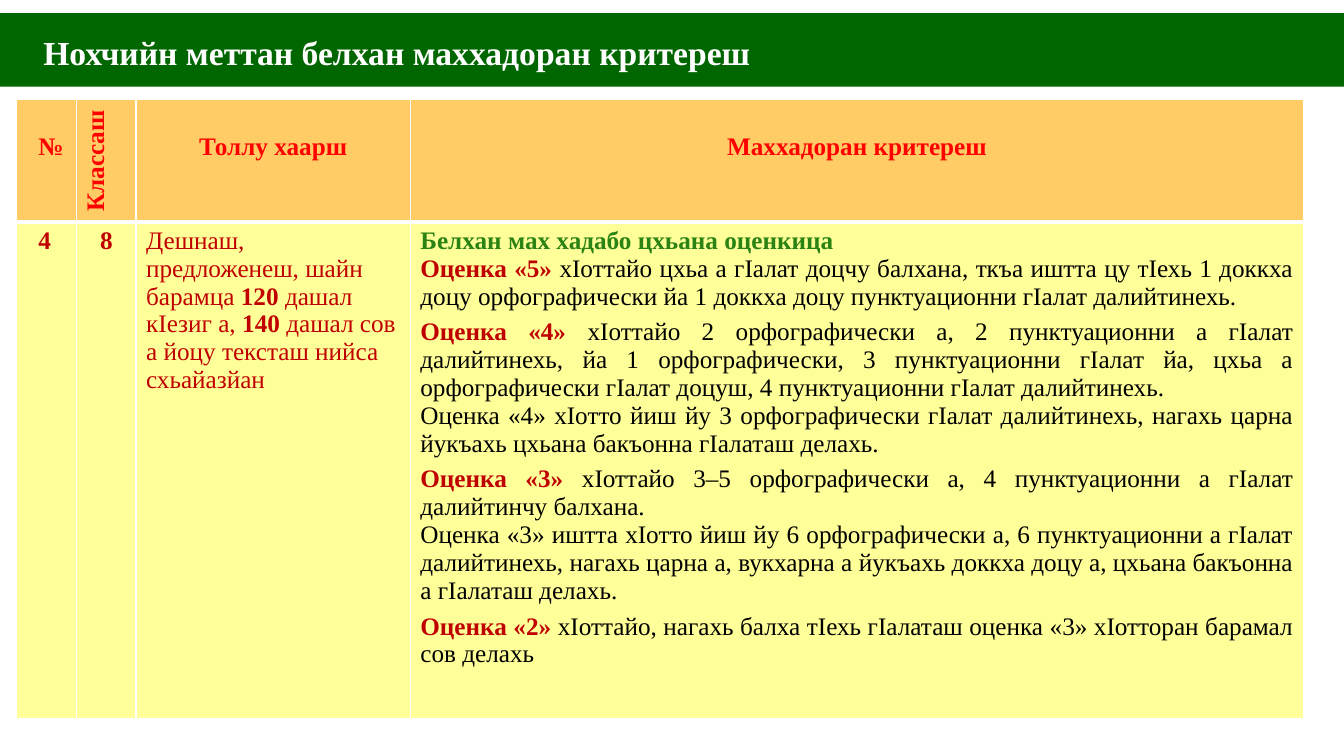
from dataclasses import dataclass

from lxml import etree
from pptx import Presentation
from pptx.dml.color import RGBColor
from pptx.enum.shapes import MSO_SHAPE
from pptx.enum.text import MSO_ANCHOR, PP_ALIGN
from pptx.oxml.ns import qn
from pptx.util import Inches, Pt

RECTANGLE = MSO_SHAPE.RECTANGLE
MIDDLE = MSO_ANCHOR.MIDDLE
LEFT, CENTER, JUSTIFY = PP_ALIGN.LEFT, PP_ALIGN.CENTER, PP_ALIGN.JUSTIFY


@dataclass(frozen=True)
class Theme:
    font: str = "Times New Roman"
    title_size: float = 24
    body_size: float = 18
    grade_gap: float = 5.5
    thin_line: float = 1
    thick_line: float = 3
    white: str = "FFFFFF"
    black: str = "000000"
    banner: str = "006600"
    header_fill: str = "FFCC66"
    body_fill: str = "FFFF99"
    header_text: str = "FF0000"
    accent: str = "C00000"
    green: str = "2B8313"


THEME = Theme()

TITLE = "Нохчийн меттан белхан маххадоран критереш"
HEADERS = ["№", "Классаш", "Толлу хаарш", "Маххадоран критереш"]
NUMBER, GRADE_YEAR = "4", "8"
# Each span is (text, bold)
SKILLS = [
    ("Дешнаш, предложенеш, шайн барамца ", False),
    ("120 ", True),
    ("дашал кӀезиг а, ", False),
    ("140 ", True),
    ("дашал сов а йоцу тексташ нийса схьайазйан", False),
]
CRITERIA_HEADING = "Белхан мах хадабо цхьана оценкица"
# Each grade is (label, its rule, an added rule or None)
GRADES = [
    ("Оценка «5» ",
     "хӀоттайо цхьа а гӀалат доцчу балхана, ткъа иштта цу тӀехь 1 доккха доцу "
     "орфографически йа 1 доккха доцу пунктуационни гӀалат далийтинехь.",
     None),
    ("Оценка «4» ",
     "хӀоттайо 2 орфографически а, 2 пунктуационни а гӀалат далийтинехь, "
     "йа 1 орфографически, 3 пунктуационни гӀалат йа, цхьа а орфографически "
     "гӀалат доцуш, 4 пунктуационни гӀалат далийтинехь.",
     "Оценка «4» хӀотто йиш йу 3 орфографически гӀалат далийтинехь, нагахь царна "
     "йукъахь цхьана бакъонна гӀалаташ делахь."),
    ("Оценка «3» ",
     "хӀоттайо 3–5 орфографически а, 4 пунктуационни а гӀалат далийтинчу балхана.",
     "Оценка «3» иштта хӀотто йиш йу 6 орфографически а, 6 пунктуационни а гӀалат "
     "далийтинехь, нагахь царна а, вукхарна а йукъахь доккха доцу а, цхьана "
     "бакъонна а гӀалаташ делахь."),
    ("Оценка «2» ",
     "хӀоттайо, нагахь балха тӀехь гӀалаташ оценка «3» хӀотторан барамал сов делахь",
     None),
]

SLIDE_WIDTH, SLIDE_HEIGHT = 13.33, 7.5
BANNER_TOP, BANNER_HEIGHT, BANNER_INDENT = 0.13, 0.73, 0.43
TABLE_LEFT, TABLE_TOP = 0.16, 0.99
COLUMN_WIDTHS = [0.6, 0.59, 2.72, 8.86]
ROW_HEIGHTS = [1.21, 4.93]
HEADER_DROP = 0.33
NUMBER_INDENT = 0.22


def write_paragraphs(frame, paragraphs, align=LEFT, size=THEME.body_size):
    """Write (space before, spans) paragraphs; a span is (text, colour, bold)."""
    for index, (space, spans) in enumerate(paragraphs):
        para = frame.add_paragraph() if index else frame.paragraphs[0]
        para.alignment = align
        para.font.name = THEME.font
        para.font.size = Pt(size)
        if space:
            para.space_before = Pt(space)
        for text, color, bold in spans:
            span = para.add_run()
            span.text = text
            span.font.bold = bold
            span.font.color.rgb = RGBColor.from_string(color)


def paint(target, color):
    target.fill.solid()
    target.fill.fore_color.rgb = RGBColor.from_string(color)


def style_cell(cell, fill, top, bottom):
    properties = cell._tc.get_or_add_tcPr()
    widths = {"L": THEME.thin_line, "R": THEME.thin_line, "T": top, "B": bottom}
    for side, width in widths.items():
        line = etree.SubElement(properties, qn(f"a:ln{side}"), w=str(Pt(width)))
        solid = etree.SubElement(line, qn("a:solidFill"))
        etree.SubElement(solid, qn("a:srgbClr"), val=THEME.white)
    paint(cell, fill)


def criteria_paragraphs():
    paragraphs = [(0, [(CRITERIA_HEADING, THEME.green, True)])]
    for index, (label, rule, added_rule) in enumerate(GRADES):
        spans = [(label, THEME.accent, True), (rule, THEME.black, False)]
        paragraphs.append((THEME.grade_gap if index else 0, spans))
        if added_rule:
            paragraphs.append((0, [(added_rule, THEME.black, False)]))
    return paragraphs


def add_banner(page):
    banner = page.shapes.add_shape(
        RECTANGLE, 0, Inches(BANNER_TOP), Inches(SLIDE_WIDTH), Inches(BANNER_HEIGHT))
    banner.shadow.inherit = False
    banner.line.fill.background()
    paint(banner, THEME.banner)
    frame = banner.text_frame
    frame.word_wrap = True
    frame.vertical_anchor = MIDDLE
    frame.margin_left = Inches(BANNER_INDENT)
    frame.margin_top = Inches(0.09)
    write_paragraphs(frame, [(0, [(TITLE, THEME.white, True)])], size=THEME.title_size)


def add_criteria_table(page):
    table = page.shapes.add_table(
        len(ROW_HEIGHTS), len(COLUMN_WIDTHS), Inches(TABLE_LEFT), Inches(TABLE_TOP),
        Inches(sum(COLUMN_WIDTHS)), Inches(sum(ROW_HEIGHTS))).table
    table.horz_banding = False
    for column, width in zip(table.columns, COLUMN_WIDTHS):
        column.width = Inches(width)
    for row, height in zip(table.rows, ROW_HEIGHTS):
        row.height = Inches(height)

    header_cells, body_cells = (list(row.cells) for row in table.rows)
    for cell, text, align in zip(header_cells, HEADERS, [LEFT, LEFT, CENTER, CENTER]):
        style_cell(cell, THEME.header_fill, THEME.thin_line, THEME.thick_line)
        cell.margin_top = Inches(HEADER_DROP)
        write_paragraphs(cell.text_frame, [(0, [(text, THEME.header_text, True)])], align)
    classes_cell = header_cells[1]
    classes_cell.margin_top = Inches(0.05)
    classes_cell._tc.get_or_add_tcPr().set("vert", "vert270")

    body = [
        ([(0, [(NUMBER, THEME.accent, True)])], LEFT),
        ([(0, [(GRADE_YEAR, THEME.accent, True)])], CENTER),
        ([(0, [(text, THEME.accent, bold) for text, bold in SKILLS])], LEFT),
        (criteria_paragraphs(), JUSTIFY),
    ]
    for cell, (paragraphs, align) in zip(body_cells, body):
        style_cell(cell, THEME.body_fill, THEME.thick_line, THEME.thin_line)
        write_paragraphs(cell.text_frame, paragraphs, align)

    for cell in (header_cells[0], body_cells[0]):
        cell.margin_left = Inches(NUMBER_INDENT)
        cell.margin_right = Inches(0.05)


def main():
    deck = Presentation()
    deck.slide_width, deck.slide_height = Inches(SLIDE_WIDTH), Inches(SLIDE_HEIGHT)
    page = deck.slides.add_slide(deck.slide_layouts[6])
    add_criteria_table(page)
    add_banner(page)
    deck.save("out.pptx")


if __name__ == "__main__":
    main()
